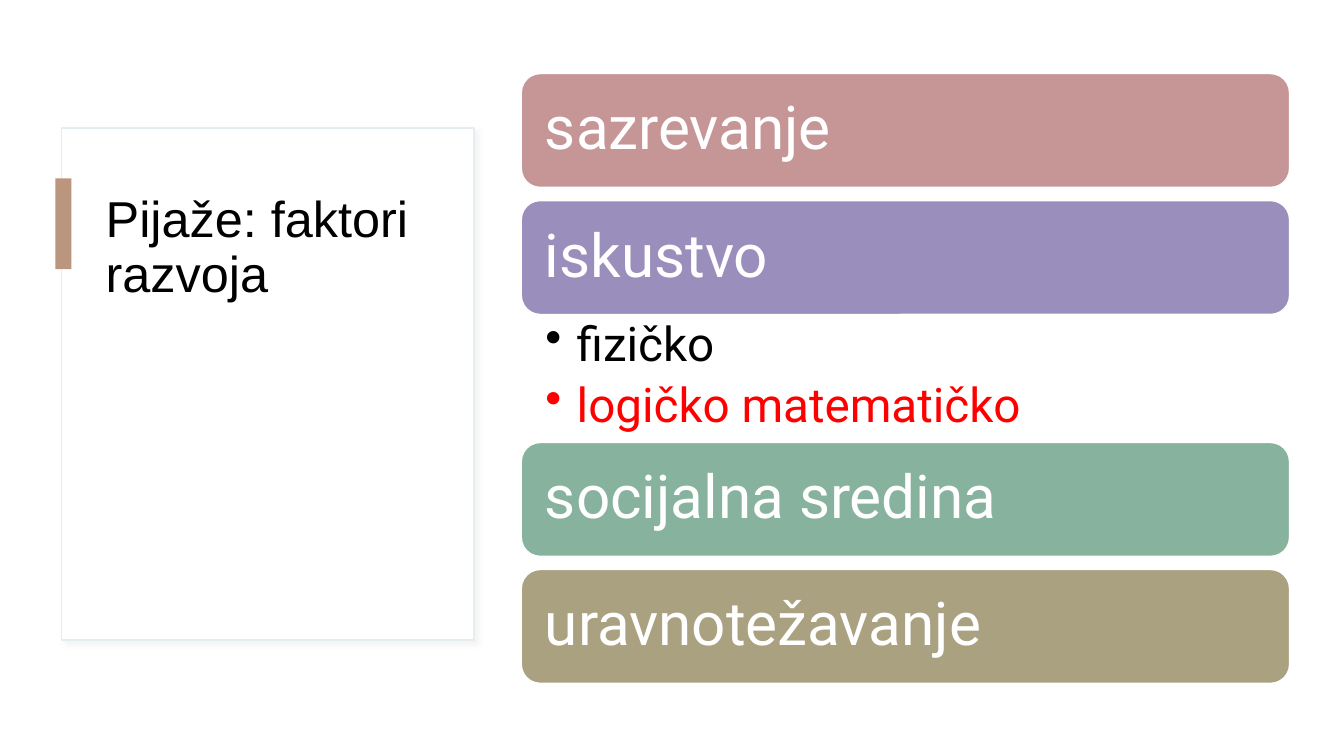
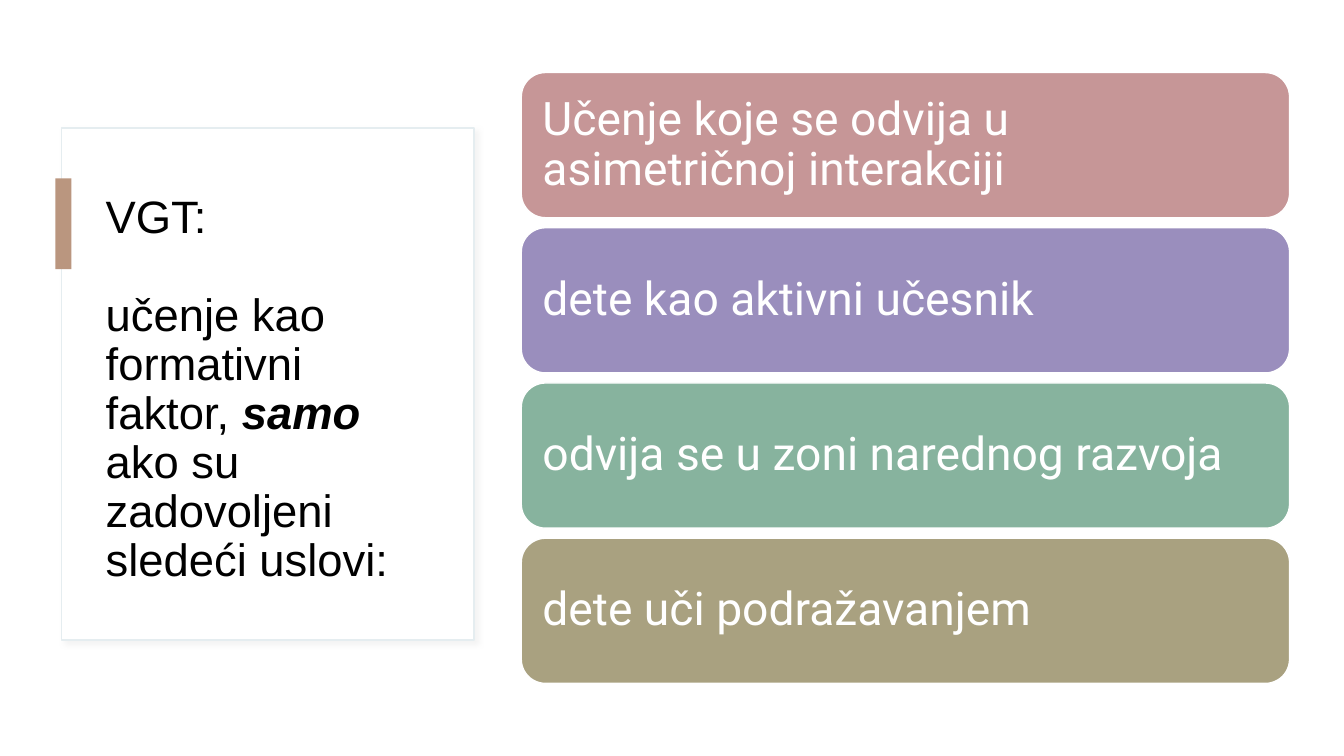
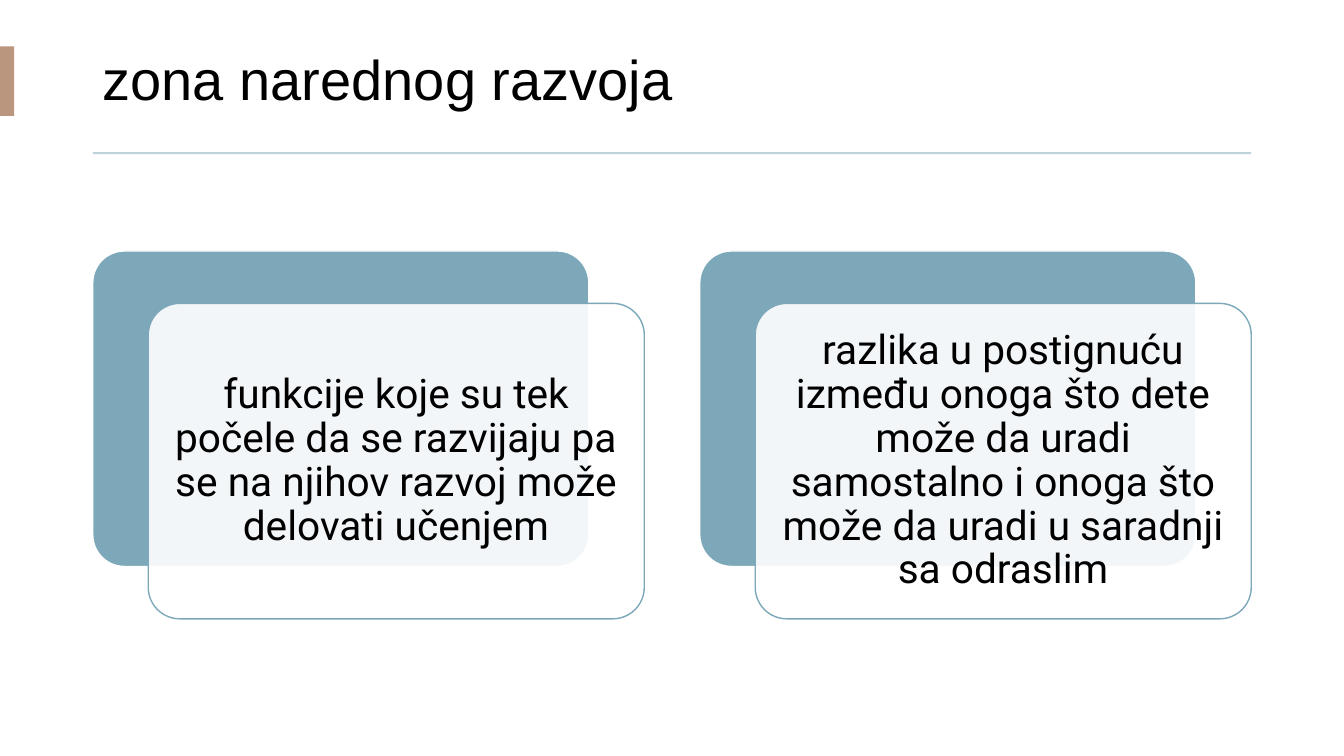
from lxml import etree
from pptx import Presentation
from pptx import util as u
from pptx.dml.color import RGBColor
from pptx.enum import shapes, text
from pptx.oxml.ns import qn

WIDTH, HEIGHT = 13.33, 7.5
HEAD_FONT, BODY_FONT = "Arial", "Roboto"
BLACK, WHITE, RED = "000000", "FFFFFF", "FF0000"
ACCENT, BORDER, RULE, BLUE = "BA967F", "E5EDF0", "BDD2DB", "7DA8B9"
BAND_COLORS = ["C69697", "9A8EBD", "87B39E", "A9A180"]
BAND_LEFT, BAND_WIDTH = 5.17, 7.62
RECT = shapes.MSO_SHAPE.RECTANGLE
ROUND = shapes.MSO_SHAPE.ROUNDED_RECTANGLE

# A paragraph is a list of (text, format) spans.
BAND_SLIDES = [
    dict(
        title=[[("Pijaže: faktori razvoja", {})]], title_size=36,
        bands=["sazrevanje", "iskustvo", "socijalna sredina", "uravnotežavanje"],
        bullets={1: [[("fizičko", {})], [("logičko matematičko", {"color": RED})]]},
        top=0.73, height=1.13, gap=0.13, size=43, inset=0.18,
    ),
    dict(
        title=[[("VGT:", {})],
               [("učenje kao formativni faktor, ", {}),
                ("samo", {"bold": True, "italic": True}),
                (" ako su zadovoljeni sledeći uslovi:", {})]],
        title_size=32.4,
        bands=["Učenje koje se odvija u asimetričnoj interakciji",
               "dete kao aktivni učesnik",
               "odvija se u zoni narednog razvoja",
               "dete uči podražavanjem"],
        bullets={},
        top=0.72, height=1.44, gap=0.1, size=33, inset=0.14,
    ),
]
ZONE_TITLE = "zona narednog razvoja"
ZONE_CARDS = [
    "funkcije koje su tek počele da se razvijaju pa se na njihov razvoj "
    "može delovati učenjem",
    "razlika u postignuću između onoga što dete može da uradi samostalno "
    "i onoga što može da uradi u saradnji sa odraslim",
]


def rgb(value):
    return RGBColor.from_string(value)


def add_xml(parent, tag, **attributes):
    return etree.SubElement(parent, qn(tag), attributes)


def add_box(page, kind, at, fill, line=None, line_width=1):
    box = page.shapes.add_shape(kind, *map(u.Inches, at))
    box.shadow.inherit = False
    box.fill.solid()
    box.fill.fore_color.rgb = rgb(fill)
    if line:
        box.line.color.rgb = rgb(line)
        box.line.width = u.Pt(line_width)
    else:
        box.line.fill.background()
    return box


def write(box, paragraphs, *, size, font=BODY_FONT, color=BLACK, inset=(0.1, 0.05, 0.1, 0.05),
          align=text.PP_ALIGN.LEFT, anchor=text.MSO_ANCHOR.MIDDLE, after=0, bullet_indent=0):
    """Fill a box with a plain string or a list of paragraphs made of spans."""
    if isinstance(paragraphs, str):
        paragraphs = [[(paragraphs, {})]]
    frame = box.text_frame
    frame.word_wrap = True
    frame.vertical_anchor = anchor
    (frame.margin_left, frame.margin_top,
     frame.margin_right, frame.margin_bottom) = map(u.Inches, inset)
    for index, spans in enumerate(paragraphs):
        para = frame.add_paragraph() if index else frame.paragraphs[0]
        para.alignment = align
        para.line_spacing = 0.9
        if index < len(paragraphs) - 1:
            para.space_after = u.Pt(after)
        if bullet_indent:
            properties = para._p.get_or_add_pPr()
            indent = u.Inches(bullet_indent)
            properties.set("marL", str(indent))
            properties.set("indent", str(-indent))
            add_xml(properties, "a:buChar", char="•")
        for words, style in spans:
            span = para.add_run()
            span.text = words
            span.font.name = font
            span.font.size = u.Pt(size)
            span.font.color.rgb = rgb(style.get("color", color))
            span.font.bold = style.get("bold", False)
            span.font.italic = style.get("italic", False)


def add_text(page, at, paragraphs, **style):
    write(page.shapes.add_textbox(*map(u.Inches, at)), paragraphs, **style)


def add_soft_shadow(box):
    effects = box._element.spPr.find(qn("a:effectLst"))
    shadow = add_xml(effects, "a:outerShdw", blurRad=str(u.Pt(4)), dist=str(u.Pt(3)),
                     dir="2700000", algn="tl", rotWithShape="0")
    tint = add_xml(shadow, "a:srgbClr", val="D9D9D9")
    add_xml(tint, "a:alpha", val="30000")


def add_title_panel(page, title, size):
    add_soft_shadow(add_box(page, RECT, (0.61, 1.27, 4.09, 5.08), WHITE, BORDER))
    add_text(page, (0.95, 1.88, 3.39, 3.85), title, size=size, font=HEAD_FONT,
             anchor=text.MSO_ANCHOR.TOP, after=35)
    add_box(page, RECT, (0.55, 1.77, 0.16, 0.9), ACCENT)


def build_band_slide(page, content):
    add_title_panel(page, content["title"], content["title_size"])
    top, height = content["top"], content["height"]
    bullet_height = 1.27
    for index, (label, color) in enumerate(zip(content["bands"], BAND_COLORS)):
        band = add_box(page, ROUND, (BAND_LEFT, top, BAND_WIDTH, height), color, WHITE)
        write(band, label, size=content["size"], color=WHITE, inset=[content["inset"]] * 4)
        top += height
        if index in content["bullets"]:
            add_text(page, (BAND_LEFT, top, BAND_WIDTH, bullet_height),
                     content["bullets"][index], size=34, inset=(0.24, 0.06, 0.33, 0.06),
                     anchor=text.MSO_ANCHOR.TOP, after=7, bullet_indent=0.31)
            top += bullet_height
        else:
            top += content["gap"]


def build_zone_slide(page):
    left, width = 0.92, 11.49
    add_text(page, (left, 0.27, width, 1.1), ZONE_TITLE, size=40, font=HEAD_FONT)
    add_box(page, RECT, (0, 0.46, 0.14, 0.69), ACCENT)
    add_box(page, RECT, (left, 1.51, width, 0.02), RULE)

    card_top, card_width, card_height = 2.49, 4.92, 3.13
    shift_x, shift_y = 0.55, 0.52
    pitch = (width - card_width - shift_x) / (len(ZONE_CARDS) - 1)
    for index, words in enumerate(ZONE_CARDS):
        x = left + index * pitch
        back = add_box(page, ROUND, (x, card_top, card_width, card_height), BLUE, WHITE)
        front = add_box(page, ROUND, (x + shift_x, card_top + shift_y, card_width, card_height),
                        WHITE, BLUE)
        for card in (back, front):
            card.adjustments[0] = 0.1
        fill = front._element.spPr.find(qn("a:solidFill"))
        add_xml(fill[0], "a:alpha", val="90000")
        write(front, words, size=29, inset=[0.12] * 4, align=text.PP_ALIGN.CENTER)


def main():
    deck = Presentation()
    deck.slide_width, deck.slide_height = u.Inches(WIDTH), u.Inches(HEIGHT)
    blank = deck.slide_layouts[6]
    for content in BAND_SLIDES:
        build_band_slide(deck.slides.add_slide(blank), content)
    build_zone_slide(deck.slides.add_slide(blank))
    deck.save("out.pptx")


if __name__ == "__main__":
    main()
